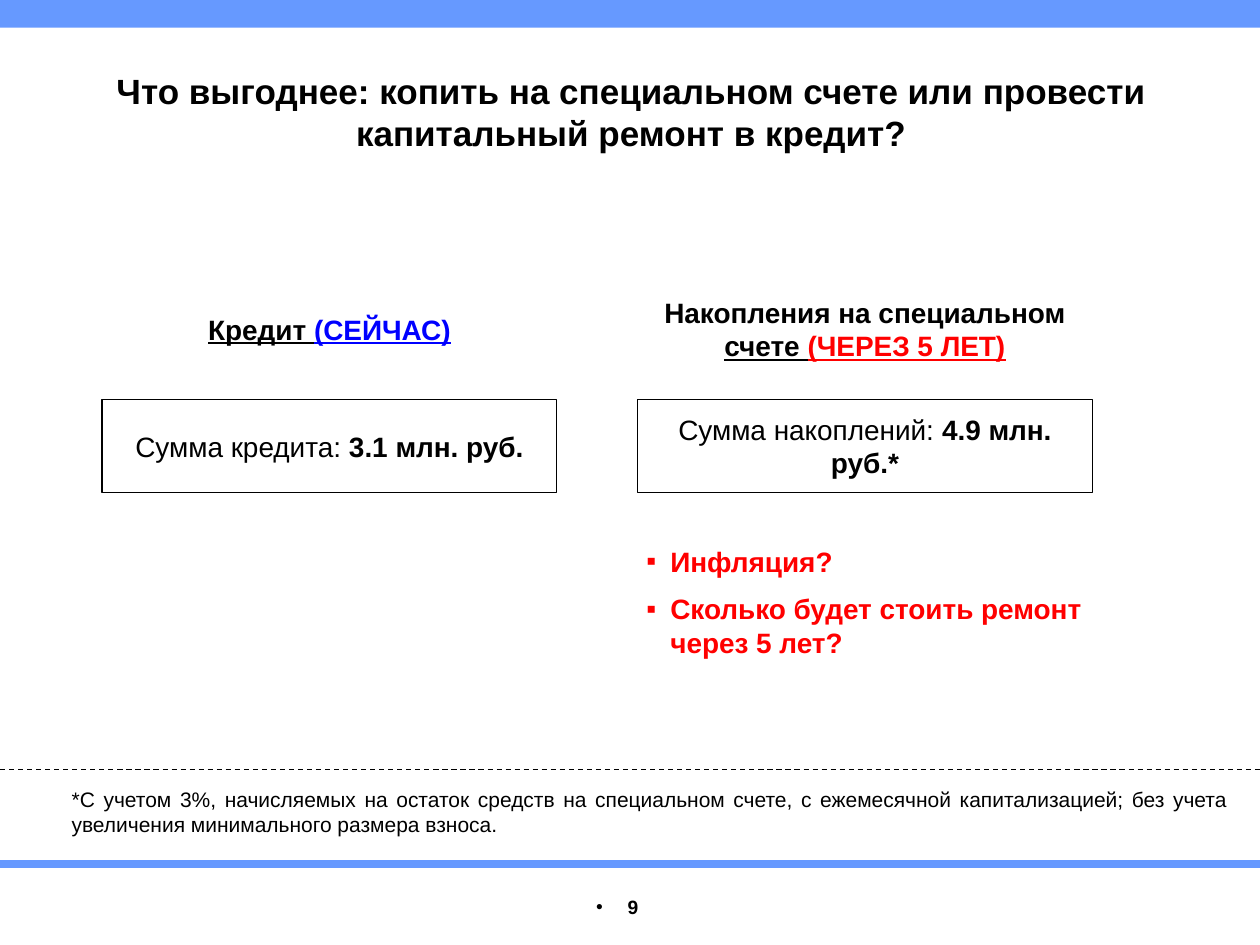
from lxml.etree import SubElement
from pptx import Presentation
from pptx.dml.color import RGBColor
from pptx.enum.dml import MSO_LINE
from pptx.enum.shapes import MSO_CONNECTOR, MSO_SHAPE
from pptx.enum.text import MSO_ANCHOR, MSO_AUTO_SIZE, PP_ALIGN
from pptx.oxml.ns import qn
from pptx.util import Inches, Pt

BLACK, BLUE, RED, BAND = "000000", "0000FF", "FF0000", "6699FF"


def rgb(value):
    return RGBColor.from_string(value)


def place(shape, box):
    shape.left, shape.top, shape.width, shape.height = map(Inches, box)


def prepare_frame(shape, anchor=MSO_ANCHOR.MIDDLE, side=0.1):
    frame = shape.text_frame
    frame.word_wrap = True
    frame.auto_size = MSO_AUTO_SIZE.NONE
    frame.vertical_anchor = anchor
    frame.margin_left = frame.margin_right = Inches(side)
    frame.margin_top = frame.margin_bottom = Inches(0.05)
    return frame


def format_paragraph(paragraph, size, bold=None, color=BLACK, align=PP_ALIGN.CENTER, before=0):
    paragraph.alignment = align
    paragraph.space_before = Pt(before)
    font = paragraph.font
    font.name, font.size, font.bold = "Arial", Pt(size), bold
    font.color.rgb = rgb(color)


def add_bullet(paragraph, character, indent):
    properties = paragraph._p.get_or_add_pPr()
    properties.set("marL", str(Inches(indent)))
    properties.set("indent", str(-Inches(indent)))
    SubElement(properties, qn("a:buFont"), typeface="Arial")
    SubElement(properties, qn("a:buChar"), char=character)


def add_rectangle(slide, box, fill=None, line=None):
    shape = slide.shapes.add_shape(MSO_SHAPE.RECTANGLE, *map(Inches, box))
    shape.shadow.inherit = False
    if fill:
        shape.fill.solid()
        shape.fill.fore_color.rgb = rgb(fill)
    else:
        shape.fill.background()
    if line:
        shape.line.color.rgb = rgb(line)
        shape.line.width = Pt(0.75)
    else:
        shape.line.fill.background()
    return shape


def add_rule(slide, top, color, width, dash=None):
    """Draw a horizontal line across the whole slide."""
    rule = slide.shapes.add_connector(
        MSO_CONNECTOR.STRAIGHT, 0, Inches(top), Inches(10), Inches(top))
    rule.line.color.rgb = rgb(color)
    rule.line.width = Pt(width)
    if dash:
        rule.line.dash_style = dash
    SubElement(rule._element.spPr, qn("a:effectLst"))


def add_title(slide, box, text):
    place(slide.shapes.title, box)
    frame = prepare_frame(slide.shapes.title)
    frame.text = text
    format_paragraph(frame.paragraphs[0], 20, True)


def add_option(slide, box, heading, label, amount):
    """Place a heading of (text, colour, underline) runs above a framed amount."""
    left, top, width, height = box
    heading_box = slide.shapes.add_textbox(*map(Inches, (left, top, width, 0.64)))
    paragraph = prepare_frame(heading_box).paragraphs[0]
    format_paragraph(paragraph, 16, True)
    for text, color, underline in heading:
        run = paragraph.add_run()
        run.text = text
        run.font.color.rgb = rgb(color)
        run.font.underline = underline

    frame_height = 0.74
    amount_box = add_rectangle(
        slide, (left, top + height - frame_height, width, frame_height), line=BLACK)
    paragraph = prepare_frame(amount_box, side=0.2).paragraphs[0]
    format_paragraph(paragraph, 16)
    for text, bold in ((label, False), (amount, True)):
        run = paragraph.add_run()
        run.text = text
        run.font.bold = bold
        run.font.color.rgb = rgb(BLACK)


def add_questions(slide, box, questions):
    body = slide.placeholders[1]
    place(body, box)
    frame = prepare_frame(body, MSO_ANCHOR.TOP)
    for index, question in enumerate(questions):
        paragraph = frame.add_paragraph() if index else frame.paragraphs[0]
        paragraph.text = question
        add_bullet(paragraph, "▪", 0.19)
        format_paragraph(paragraph, 16, True, RED, PP_ALIGN.LEFT, 8 if index else 0)


def add_footnote(slide, box, text):
    shape = slide.shapes.add_textbox(*map(Inches, box))
    frame = prepare_frame(shape, MSO_ANCHOR.TOP)
    frame.text = text
    format_paragraph(frame.paragraphs[0], 12, align=PP_ALIGN.JUSTIFY)


def add_page_number(slide, box, number):
    shape = slide.shapes.add_textbox(*map(Inches, box))
    frame = prepare_frame(shape)
    frame.margin_left, frame.margin_right = 0, Inches(0.2)
    paragraph = frame.paragraphs[0]
    paragraph.text = number
    add_bullet(paragraph, "•", 0.25)
    format_paragraph(paragraph, 11, True)


def main():
    presentation = Presentation()
    presentation.slide_width, presentation.slide_height = Inches(10), Inches(7.5)
    slide = presentation.slides.add_slide(presentation.slide_layouts[1])
    for placeholder in list(slide.placeholders):
        if placeholder.placeholder_format.idx > 1:
            placeholder._element.getparent().remove(placeholder._element)

    add_rectangle(slide, (0, 0, 10, 0.22), fill=BAND)
    add_rule(slide, 6.86, BAND, 4.5)
    add_title(slide, (0.5, 0.5, 9.02, 0.77),
              "Что выгоднее: копить на специальном счете или провести "
              "капитальный ремонт в кредит?")
    add_option(slide, (0.81, 2.29, 3.61, 1.62),
               [("Кредит ", BLACK, True), ("(СЕЙЧАС)", BLUE, True)],
               "Сумма кредита: ", "3.1 млн. руб.")
    add_option(slide, (5.06, 2.29, 3.61, 1.62),
               [("Накопления на специальном ", BLACK, False), ("счете ", BLACK, True),
                ("(ЧЕРЕЗ 5 ЛЕТ)", RED, True)],
               "Сумма накоплений: ", "4.9 млн. руб.*")
    add_questions(slide, (5.03, 4.27, 4.17, 1.04),
                  ["Инфляция?", "Сколько будет стоить ремонт через 5 лет?"])
    add_rule(slide, 6.11, BLACK, 0.75, MSO_LINE.DASH)
    add_footnote(slide, (0.47, 6.19, 9.38, 0.5),
                 "*С учетом 3%, начисляемых на остаток средств на специальном счете, "
                 "с ежемесячной капитализацией; без учета увеличения минимального "
                 "размера взноса.")
    add_page_number(slide, (3.97, 7.04, 2.06, 0.31), "9")
    presentation.save("out.pptx")


if __name__ == "__main__":
    main()
